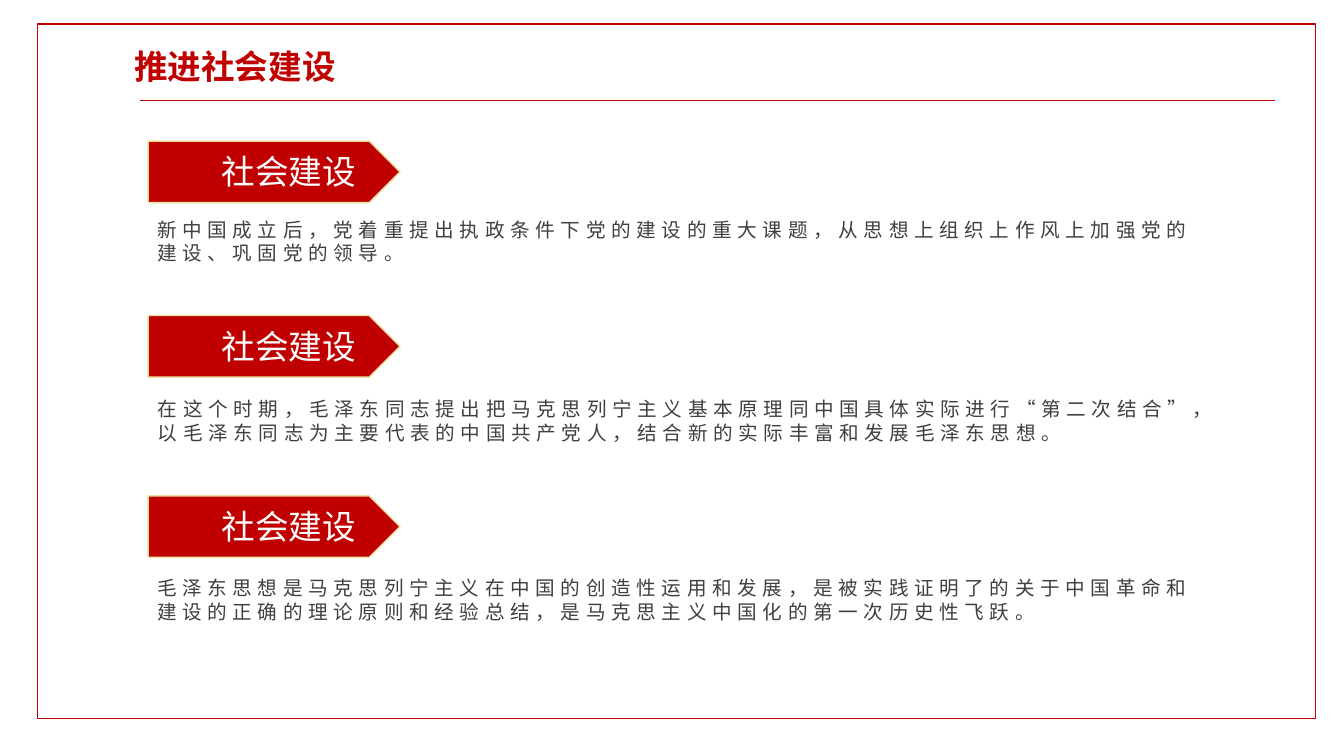
from dataclasses import dataclass

from lxml import etree
from pptx import Presentation
from pptx.dml.color import RGBColor
from pptx.enum.shapes import MSO_CONNECTOR, MSO_SHAPE
from pptx.enum.text import MSO_ANCHOR, PP_ALIGN
from pptx.oxml.ns import qn
from pptx.util import Pt

LINE = MSO_CONNECTOR.STRAIGHT
RECT = MSO_SHAPE.RECTANGLE
ARROW = MSO_SHAPE.PENTAGON
TOP = MSO_ANCHOR.TOP
LEFT = PP_ALIGN.LEFT
JUST = PP_ALIGN.JUSTIFY


@dataclass(frozen=True)
class Theme:
    red: RGBColor = RGBColor(0xC0, 0x00, 0x00)
    gold: RGBColor = RGBColor(0xEC, 0xE0, 0xA2)
    white: RGBColor = RGBColor(0xFF, 0xFF, 0xFF)
    gray: RGBColor = RGBColor(0x40, 0x40, 0x40)
    font: str = "Noto Sans CJK SC"
    head: int = 24
    body: int = 14
    track: int = 4


THEME = Theme()

TITLE = "推进社会建设"
LABEL = "社会建设"
ITEMS = [
    (100.8, 105.1, 151.9,
     "新中国成立后，党着重提出执政条件下党的建设的重大课题，"
     "从思想上组织上作风上加强党的建设、巩固党的领导。"),
    (225.4, 105.8, 280.1,
     "在这个时期，毛泽东同志提出把马克思列宁主义基本原理同中国具体实际进行"
     "“第二次结合”，以毛泽东同志为主要代表的中国共产党人，"
     "结合新的实际丰富和发展毛泽东思想。"),
    (354.2, 105.1, 408.2,
     "毛泽东思想是马克思列宁主义在中国的创造性运用和发展，"
     "是被实践证明了的关于中国革命和建设的正确的理论原则和经验总结，"
     "是马克思主义中国化的第一次历史性飞跃。"),
]


def place(shape, x, y, w, h):
    shape.left, shape.top = Pt(x), Pt(y)
    shape.width, shape.height = Pt(w), Pt(h)


def write(shape, text, size, color, bold=False, track=0, align=LEFT):
    frame = shape.text_frame
    frame.word_wrap = True
    frame.vertical_anchor = TOP
    frame.text = text
    para = frame.paragraphs[0]
    para.alignment = align
    para.line_spacing = Pt(size * 1.2)
    para.space_before = Pt(0)
    font = para.font
    font.name = THEME.font
    font.size = Pt(size)
    font.bold = bold
    font.color.rgb = color
    props = para._p.pPr.find(qn("a:defRPr"))
    if track:
        props.set("spc", str(track * 100))
    east = etree.Element(qn("a:ea"), typeface=THEME.font)
    props.find(qn("a:latin")).addnext(east)


def add_text(shapes, x, y, w, h, text, size, color, track=0):
    box = shapes.add_textbox(Pt(x), Pt(y), Pt(w), Pt(h))
    write(box, text, size, color, track=track)


def add_block(shapes, kind, x, y, w, h, fill, edge):
    block = shapes.add_shape(kind, Pt(x), Pt(y), Pt(w), Pt(h))
    block.shadow.inherit = False
    block.fill.solid()
    block.fill.fore_color.rgb = fill
    block.line.color.rgb = edge
    block.line.width = Pt(1)
    return block


def add_rule(shapes, x, y, end):
    rule = shapes.add_connector(LINE, Pt(x), Pt(y), Pt(end), Pt(y))
    rule.line.color.rgb = THEME.red
    rule.line.width = Pt(0.5)
    etree.SubElement(rule._element.spPr, qn("a:effectLst"))


def add_item(slide, top, left, base, text):
    shapes = slide.shapes.add_group_shape().shapes
    add_block(shapes, ARROW, 105.8, top, 180, 44, THEME.red, THEME.gold)
    add_text(shapes, 151.2, top + 3.6, 134.6, 36, LABEL, THEME.head, THEME.white)
    add_text(shapes, left, base, 758.2, 41, text, THEME.body, THEME.gray, THEME.track)


def main():
    deck = Presentation()
    deck.slide_width, deck.slide_height = Pt(960), Pt(540)
    slide = deck.slides.add_slide(deck.slide_layouts[5])
    shapes = slide.shapes
    title = shapes.title
    frame = add_block(shapes, RECT, 26.6, 17.3, 913, 496, THEME.white, THEME.red)
    title._element.addprevious(frame._element)
    add_rule(shapes, 100.1, 71.6, 910.8)
    place(title, 88.6, 29.5, 181.4, 36)
    write(title, TITLE, THEME.head, THEME.red, bold=True, align=JUST)
    for item in ITEMS:
        add_item(slide, *item)
    deck.save("out.pptx")


if __name__ == "__main__":
    main()
